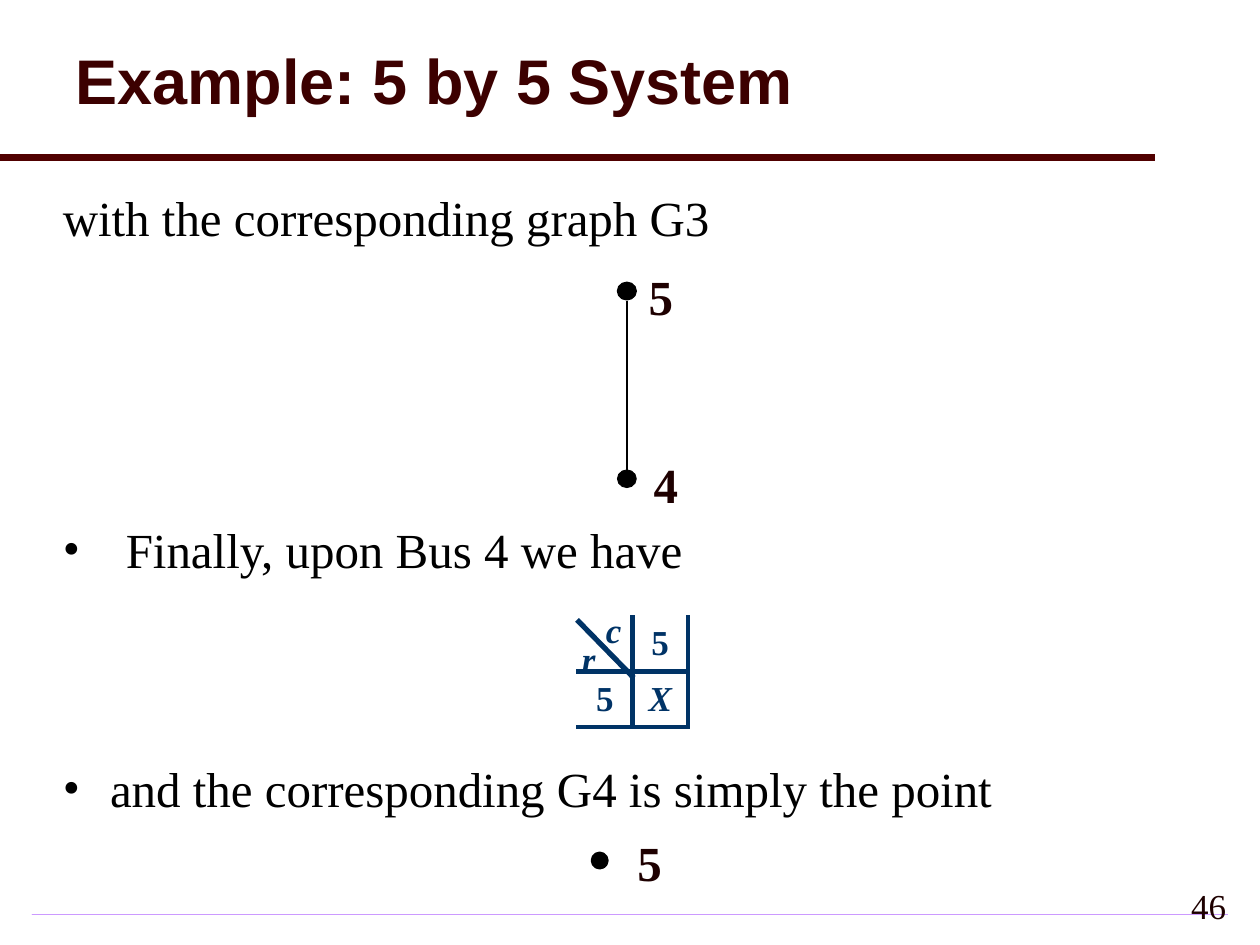
import pptx
import pptx.util
import pptx.dml.color
import pptx.enum.shapes
import pptx.enum.text
import pptx.oxml
import pptx.oxml.ns
import lxml.etree

COLORS = {
    "title": "3C0000", "rule": "500000", "label": "1E0000", "body": "000000",
    "table": "003366", "footer_start": "CC99FF", "footer_end": "F3EBFF",
}
SERIF = "Times New Roman"
COLUMNS, ROWS = 100, 75
UNIT = pptx.util.Inches(10) // COLUMNS
ALIGN = pptx.enum.text.PP_ALIGN
MIDDLE = pptx.enum.text.MSO_ANCHOR.MIDDLE
SHAPE = pptx.enum.shapes.MSO_SHAPE


def grid(*steps):
    return [round(step * UNIT) for step in steps]


def rgb(name):
    return pptx.dml.color.RGBColor.from_string(COLORS[name])


def append_element(parent, tag, **attributes):
    element = pptx.oxml.parse_xml(f"<a:{tag} {pptx.oxml.ns.nsdecls('a')}/>")
    for name, value in attributes.items():
        element.set(name, value)
    parent.append(element)
    return element


def add_run(paragraph, text, size, color, font=SERIF, bold=False, italic=False):
    run = paragraph.add_run()
    run.text = text
    run.font.name, run.font.size = font, pptx.util.Pt(size)
    run.font.bold, run.font.italic = bold, italic
    run.font.color.rgb = rgb(color)


def add_label(slide, text, left, top, size=28, color="label", italic=False):
    box = slide.shapes.add_textbox(*grid(left, top, 4, 4.4))
    box.text_frame.word_wrap = False
    add_run(box.text_frame.paragraphs[0], text, size, color, bold=True, italic=italic)


def add_line(slide, start, end, color, width):
    line = slide.shapes.add_connector(
        pptx.enum.shapes.MSO_CONNECTOR.STRAIGHT, *grid(*start, *end))
    line.line.color.rgb = rgb(color)
    line.line.width = pptx.util.Pt(width)
    append_element(line._element.spPr, "effectLst")


def add_node(slide, left, top, width, height, outline):
    node = slide.shapes.add_shape(SHAPE.OVAL, *grid(left, top, width, height))
    node.shadow.inherit = False
    node.fill.solid()
    node.fill.fore_color.rgb = rgb("body")
    node.line.color.rgb = rgb("body")
    node.line.width = pptx.util.Pt(outline)


def add_title(slide, left, top, width, height):
    title = slide.shapes.title
    title.left, title.top, title.width, title.height = grid(left, top, width, height)
    title.text_frame.vertical_anchor = MIDDLE
    paragraph = title.text_frame.paragraphs[0]
    paragraph.alignment, paragraph.line_spacing = ALIGN.LEFT, 0.9
    add_run(paragraph, "Example: 5 by 5 System", 36, "title", "Arial", bold=True)
    add_line(slide, (0, 12.5), (91.7, 12.5), "rule", 4)


def add_footer(slide, left, top, width):
    rule = slide.shapes.add_shape(SHAPE.RECTANGLE, *grid(left, top, width, 0.1))
    rule.shadow.inherit = False
    rule.line.fill.background()
    rule.fill.gradient()
    for stop, name in zip(rule.fill.gradient_stops, ("footer_start", "footer_end")):
        stop.color.rgb = rgb(name)
    gradient = rule._element.spPr.find(pptx.oxml.ns.qn("a:gradFill"))
    gradient.remove(gradient.find(pptx.oxml.ns.qn("a:lin")))
    center = append_element(gradient, "path")
    center.set("path", "shape")
    append_element(center, "fillToRect", l="50000", t="50000", r="50000", b="50000")

    number = slide.shapes.add_textbox(*grid(left + 75, top - 3.1, 20.8, 5))
    number.text_frame.word_wrap = True
    number.text_frame.vertical_anchor = MIDDLE
    paragraph = number.text_frame.paragraphs[0]
    paragraph.alignment = ALIGN.RIGHT
    add_run(paragraph, "46", 20, "label")


def add_body(slide, left, top, width, height):
    """Place the three statements, with room for a drawing between them."""
    frame = slide.shapes.add_textbox(*grid(left, top, width, height)).text_frame
    frame.word_wrap = True
    statements = [
        ("with the corresponding graph G3", 0, 0),
        ("Finally, upon Bus 4 we have", 5, 156),
        ("and the corresponding G4 is simply the point", 3.75, 103),
    ]
    for index, (text, indent, space) in enumerate(statements):
        paragraph = frame.add_paragraph() if index else frame.paragraphs[0]
        if indent:
            properties = paragraph._p.get_or_add_pPr()
            hanging = grid(indent)[0]
            properties.set("marL", str(hanging))
            properties.set("indent", str(-hanging))
            append_element(properties, "buFont", typeface=SERIF)
            append_element(properties, "buChar", char="•")
        paragraph.space_before = pptx.util.Pt(space)
        add_run(paragraph, text, 28, "body")


def add_edge_graph(slide, left, top):
    """Draw graph G3: nodes 5 and 4 joined by an edge."""
    size, gap = 1.5, 14.9
    add_line(slide, (left + size / 2, top + size), (left + size / 2, top + gap), "body", 1.5)
    for text, shift, offset, outline in (("5", 1.5, 0, 0.75), ("4", 1.9, gap, 0.5)):
        add_node(slide, left, top + offset, size, 1.4, outline)
        add_label(slide, text, left + shift, top + offset - 1.7)


def add_point_graph(slide, left, top):
    """Draw graph G4: the single node 5."""
    add_node(slide, left, top, 1, 1, 3)
    add_label(slide, "5", left + 2.5, top - 2.2)


def set_borders(cell, sides):
    properties = cell._tc.get_or_add_tcPr()
    for index, side in enumerate(sides):
        line = append_element(properties, f"ln{side}", w=str(pptx.util.Pt(3)))
        append_element(append_element(line, "solidFill"), "srgbClr", val=COLORS["table"])
        properties.insert(index, line)


def add_matrix(slide, left, top, cell_size):
    """Draw the row and column table with its split corner cell."""
    entries = [["", "5"], ["5", "X"]]
    table = slide.shapes.add_table(
        2, 2, *grid(left, top, 2 * cell_size, 2 * cell_size)).table
    table.first_row = table.horz_banding = False
    for row, texts in enumerate(entries):
        for column, text in enumerate(texts):
            cell = table.cell(row, column)
            cell.fill.background()
            cell.vertical_anchor = MIDDLE
            set_borders(cell, ["L"] * column + ["R"] + ["T"] * row + ["B"])
            paragraph = cell.text_frame.paragraphs[0]
            paragraph.alignment = ALIGN.CENTER
            if text:
                add_run(paragraph, text, 20, "table", bold=True, italic=text == "X")
    add_label(slide, "r", left - 0.6, top + 1.2, 20, "table", italic=True)
    add_label(slide, "c", left + 1.3, top - 1.1, 20, "table", italic=True)
    add_line(slide, (left + 4.5, top + 4.9), (left, top + 0.3), "table", 3)


def main():
    presentation = pptx.Presentation()
    presentation.slide_width, presentation.slide_height = grid(COLUMNS, ROWS)
    slide = presentation.slides.add_slide(presentation.slide_layouts[5])
    add_footer(slide, 2.5, 72.5, 95)
    add_title(slide, 5, 0.8, 87.5, 11.7)
    add_body(slide, 4, 14.4, 86, 53)
    add_edge_graph(slide, 49, 22.4)
    add_matrix(slide, 45.8, 48.9, 4.4)
    add_point_graph(slide, 47.1, 67.8)
    presentation.save("out.pptx")


if __name__ == "__main__":
    main()
